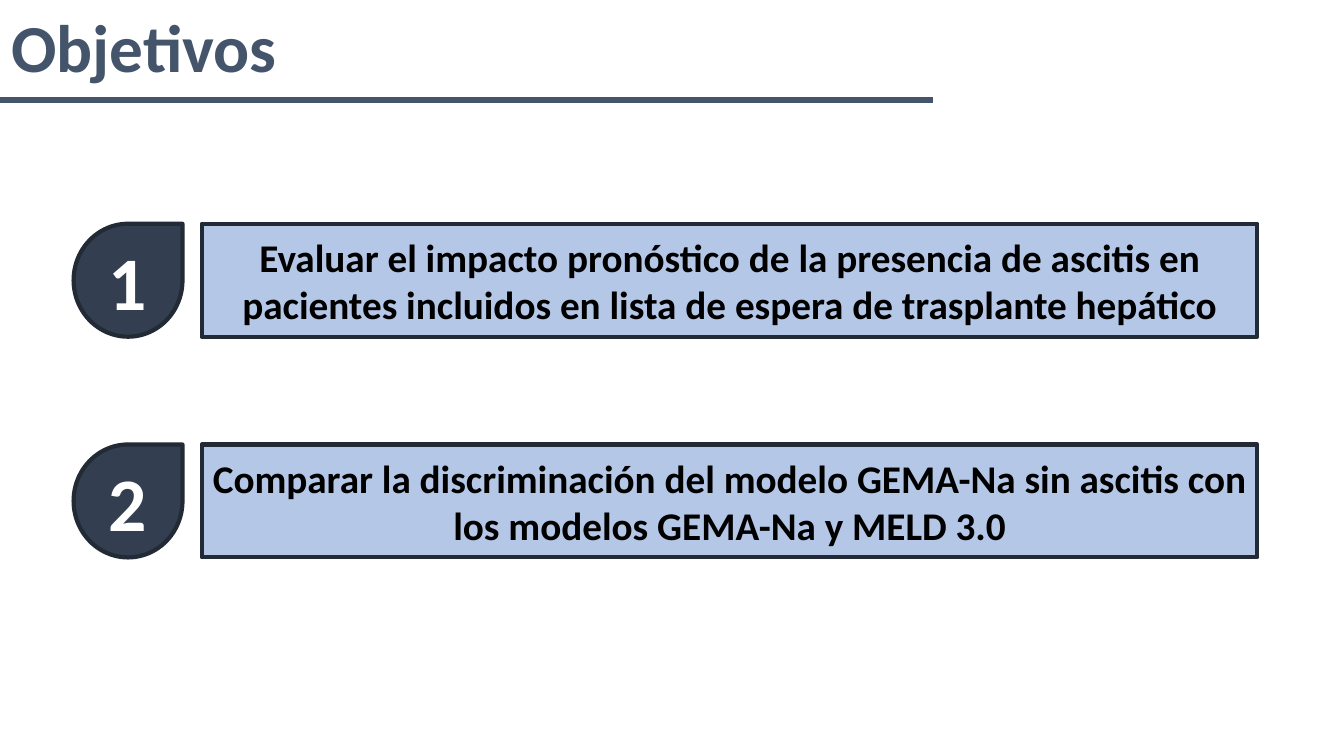
import pptx
import pptx.util
import pptx.dml.color
import pptx.enum.shapes
import pptx.enum.text
import pptx.oxml.ns
import lxml.etree

Inches = pptx.util.Inches
Kind = pptx.enum.shapes.MSO_SHAPE


class Deck:
    font = "Calibri"
    hues = {
        "slate": "44546A",
        "pale": "B4C7E7",
        "navy": "333F50",
        "edge": "222A35",
        "black": "000000",
        "white": "FFFFFF",
    }

    def __init__(self, wide, high):
        self.show = pptx.Presentation()
        self.show.slide_width = Inches(wide)
        self.show.slide_height = Inches(high)
        self.slide = self.show.slides.add_slide(self.show.slide_layouts[6])

    def hue(self, name):
        return pptx.dml.color.RGBColor.from_string(self.hues[name])

    def label(self, frame, text, size, hue):
        para = frame.paragraphs[0]
        para.alignment = pptx.enum.text.PP_ALIGN.CENTER
        run = para.add_run()
        run.text = text
        run.font.name = self.font
        run.font.size = pptx.util.Pt(size)
        run.font.bold = True
        run.font.color.rgb = self.hue(hue)

    def title(self, text, left, top, wide, high):
        box = self.slide.shapes.add_textbox(
            Inches(left), Inches(top), Inches(wide), Inches(high))
        frame = box.text_frame
        frame.word_wrap = False
        frame.auto_size = pptx.enum.text.MSO_AUTO_SIZE.SHAPE_TO_FIT_TEXT
        self.label(frame, text, 48, "slate")

    def rule(self, left, right, top):
        line = self.slide.shapes.add_connector(
            pptx.enum.shapes.MSO_CONNECTOR.STRAIGHT,
            Inches(left), Inches(top), Inches(right), Inches(top))
        line.line.color.rgb = self.hue("slate")
        line.line.width = pptx.util.Pt(4)
        props = line._element.spPr
        lxml.etree.SubElement(props, pptx.oxml.ns.qn("a:effectLst"))

    def shape(self, kind, left, top, wide, high, fill, text, size, hue):
        item = self.slide.shapes.add_shape(
            kind, Inches(left), Inches(top), Inches(wide), Inches(high))
        item.shadow.inherit = False
        item.fill.solid()
        item.fill.fore_color.rgb = self.hue(fill)
        item.line.color.rgb = self.hue("edge")
        item.line.width = pptx.util.Pt(3)
        frame = item.text_frame
        frame.word_wrap = True
        frame.vertical_anchor = pptx.enum.text.MSO_ANCHOR.MIDDLE
        self.label(frame, text, size, hue)

    def goal(self, mark, text, top):
        high = 1.12
        self.shape(Kind.RECTANGLE, 2, top, 10.47, high,
                   "pale", text, 28, "black")
        self.shape(Kind.TEAR, 0.73, top, 1.08, high,
                   "navy", str(mark), 54, "white")


def main():
    goals = [
        "Evaluar el impacto pronóstico de la presencia de ascitis en "
        "pacientes incluidos en lista de espera de trasplante hepático",
        "Comparar la discriminación del modelo GEMA-Na sin ascitis con "
        "los modelos GEMA-Na y MELD 3.0",
    ]
    first, step = 2.22, 2.19
    deck = Deck(13.33, 7.5)
    deck.rule(-0.01, 9.25, 0.99)
    deck.title("Objetivos", 0, 0, 2.86, 0.91)
    for row, text in enumerate(goals):
        deck.goal(row + 1, text, first + row * step)
    deck.show.save("out.pptx")


if __name__ == "__main__":
    main()
